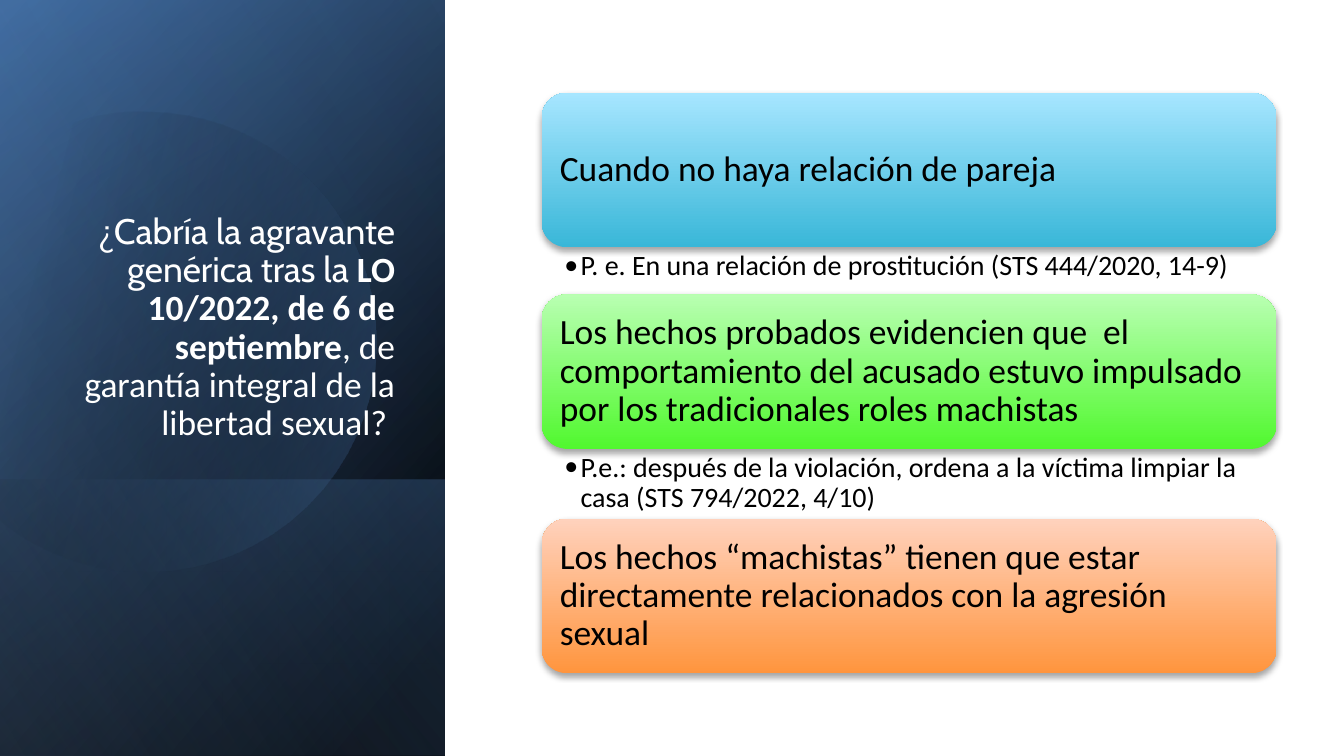
from dataclasses import dataclass
from math import cos, radians, sin

from pptx import Presentation
from pptx.dml.color import RGBColor
from pptx.enum.shapes import MSO_SHAPE
from pptx.enum.text import MSO_ANCHOR, MSO_AUTO_SIZE, PP_ALIGN
from pptx.oxml import parse_xml
from pptx.oxml.ns import nsdecls, qn
from pptx.util import Inches, Pt


@dataclass(frozen=True)
class Theme:
    title_font: str = "Cabin"
    body_font: str = "Calibri"
    large: int = 19
    small: int = 15
    light: str = "FFFFFF"
    dark: str = "000000"
    navy: str = "376092"
    blue: str = "4F81BD"
    pale_blue: str = "95B3D7"
    sky: tuple = ("39B7D8", "A7E6FF")
    green: tuple = ("51F82F", "B9FFB2")
    orange: tuple = ("FF953E", "FFD2BD")


theme = Theme()


def set_gradient(shape, angle, stops):
    """Fill with (position %, colour, opacity %) stops and remove the outline."""
    shape.shadow.inherit = False
    shape.line.fill.background()
    shape.fill.background()
    stop_xml = "".join(
        f'<a:gs pos="{position * 1000}"><a:srgbClr val="{color}">'
        f'<a:alpha val="{opacity * 1000}"/></a:srgbClr></a:gs>'
        for position, color, opacity in stops
    )
    gradient = parse_xml(
        f'<a:gradFill {nsdecls("a")} rotWithShape="1"><a:gsLst>{stop_xml}</a:gsLst>'
        f'<a:lin ang="{angle * 60000}" scaled="0"/></a:gradFill>'
    )
    properties = shape.element.spPr
    properties.replace(properties.find(qn("a:noFill")), gradient)


def format_run(run, font, size, color, bold=False):
    run.font.name = font
    run.font.size = Pt(size)
    run.font.color.rgb = RGBColor.from_string(color)
    run.font.bold = bold


# Widescreen slide, 16:9
presentation = Presentation()
presentation.slide_width = Inches(10)
presentation.slide_height = Inches(10 * 9 / 16)
slide = presentation.slides.add_slide(presentation.slide_layouts[5])
title = slide.shapes.title

# Side panel: layered gradients, with the circle below the last layer
full_panel = (-1.16, 1.16, 5.63, 3.31)
lower_panel = (0.63, 2.94, 2.05, 3.31)
layers = [
    (full_panel, 50, [(8, theme.dark, 100), (100, theme.navy, 100)]),
    (full_panel, 30, [(0, theme.dark, 0), (99, theme.blue, 46)]),
    (lower_panel, 130, [(2, theme.blue, 29), (100, theme.dark, 30)]),
    (full_panel, 120, [(0, theme.dark, 0), (99, theme.pale_blue, 11)]),
]
for box, angle, stops in layers:
    panel = slide.shapes.add_shape(MSO_SHAPE.RECTANGLE, *map(Inches, box))
    panel.rotation = 90
    panel.element.spPr.xfrm.set("flipH", "1")
    set_gradient(panel, angle, stops)

# Cut circle: Bézier curves sampled as points, turned back by the shape's rotation
circle_start = (1.11, 0.83)
circle_curves = [
    ((1.85, 0.84), (2.51, 1.33), (2.73, 2.07)),
    ((2.99, 2.98), (2.46, 3.93), (1.55, 4.19)),
    ((0.98, 4.35), (0.4, 4.21), (-0.02, 3.86)),
    ((-0.11, 3.77),),
    ((-0.11, 1.31),),
    ((0, 1.21),),
    ((0.17, 1.07), (0.38, 0.96), (0.6, 0.89)),
    ((0.77, 0.84), (0.95, 0.82), (1.11, 0.83)),
]
outline = [circle_start]
for curve in circle_curves:
    if len(curve) == 1:
        outline.append(curve[0])
        continue
    controls = (outline[-1], *curve)
    for step in range(1, 17):
        t = step / 16
        weights = ((1 - t) ** 3, 3 * t * (1 - t) ** 2, 3 * t**2 * (1 - t), t**3)
        outline.append(tuple(
            sum(weight * point[axis] for weight, point in zip(weights, controls))
            for axis in (0, 1)
        ))
rotation = 343.9
center_x, center_y = 1.19, 2.52
cosine, sine = cos(radians(-rotation)), sin(radians(-rotation))
points = [
    (
        Inches(center_x + (x - center_x) * cosine - (y - center_y) * sine),
        Inches(center_y + (x - center_x) * sine + (y - center_y) * cosine),
    )
    for x, y in outline
]
builder = slide.shapes.build_freeform(*points[0])
builder.add_line_segments(points[1:], close=True)
circle = builder.convert_to_shape()
circle.rotation = rotation
set_gradient(circle, 30, [(29, theme.dark, 0), (100, theme.blue, 43)])
panel.element.addprevious(circle.element)

# Title, in front of the panel
slide.shapes.element.append(title.element)
title.left, title.top, title.width, title.height = map(Inches, (0.48, 1.38, 2.56, 1.97))
title_frame = title.text_frame
title_frame.word_wrap = True
title_frame.auto_size = MSO_AUTO_SIZE.NONE
title_frame.vertical_anchor = MSO_ANCHOR.BOTTOM
paragraph = title_frame.paragraphs[0]
paragraph.alignment = PP_ALIGN.RIGHT
paragraph.line_spacing = 0.9
for text, font, bold in [
    ("¿Cabría la agravante genérica tras la ", theme.title_font, False),
    ("LO 10/2022, de 6 de septiembre", theme.body_font, True),
    (", de garantía integral de la libertad sexual? ", theme.body_font, False),
]:
    run = paragraph.add_run()
    run.text = text
    format_run(run, font, theme.large, theme.light, bold)

# Cards, each followed by its example
cards = [
    (theme.sky, "Cuando no haya relación de pareja",
     "P. e. En una relación de prostitución (STS 444/2020, 14-9)", 0.35),
    (theme.green, "Los hechos probados evidencien que  el comportamiento del acusado "
     "estuvo impulsado por los tradicionales roles machistas",
     "P.e.: después de la violación, ordena a la víctima limpiar la casa "
     "(STS 794/2022, 4/10)", 0.52),
    (theme.orange, "Los hechos “machistas” tienen que estar directamente relacionados "
     "con la agresión sexual", None, 0),
]
card_left, card_width, card_height = 4.03, 5.47, 1.15
top = 0.69
for (bottom_color, top_color), statement, example, example_height in cards:
    card = slide.shapes.add_shape(
        MSO_SHAPE.ROUNDED_RECTANGLE,
        Inches(card_left), Inches(top), Inches(card_width), Inches(card_height),
    )
    set_gradient(card, 270, [(0, bottom_color, 100), (100, top_color, 100)])
    card.element.spPr.find(qn("a:effectLst")).append(parse_xml(
        f'<a:outerShdw {nsdecls("a")} blurRad="{Pt(3.1)}" dist="{Pt(1.8)}" '
        f'dir="5400000" rotWithShape="0"><a:srgbClr val="{theme.dark}">'
        '<a:alpha val="35000"/></a:srgbClr></a:outerShdw>'
    ))
    frame = card.text_frame
    frame.word_wrap = True
    frame.vertical_anchor = MSO_ANCHOR.MIDDLE
    frame.margin_left = frame.margin_right = Inches(0.08)
    frame.margin_top = frame.margin_bottom = Inches(0.08)
    frame.text = statement
    paragraph = frame.paragraphs[0]
    paragraph.alignment = PP_ALIGN.LEFT
    paragraph.line_spacing = 0.9
    format_run(paragraph.runs[0], theme.body_font, theme.large, theme.dark)
    top += card_height

    if example:
        example_box = slide.shapes.add_textbox(
            Inches(card_left), Inches(top), Inches(card_width), Inches(example_height)
        )
        frame = example_box.text_frame
        frame.word_wrap = True
        frame.margin_left, frame.margin_right = Inches(0.17), Inches(0.15)
        frame.margin_top = frame.margin_bottom = Inches(0.03)
        frame.text = example
        paragraph = frame.paragraphs[0]
        paragraph.level = 1
        paragraph.line_spacing = 0.9
        paragraph_properties = paragraph._p.get_or_add_pPr()
        paragraph_properties.set("marL", str(Inches(0.12)))
        paragraph_properties.set("indent", str(Inches(-0.12)))
        for bullet in (f'buFont {nsdecls("a")} typeface="{theme.body_font}"',
                       f'buChar {nsdecls("a")} char="•"'):
            paragraph_properties.append(parse_xml(f"<a:{bullet}/>"))
        format_run(paragraph.runs[0], theme.body_font, theme.small, theme.dark)
        top += example_height

presentation.save("out.pptx")
